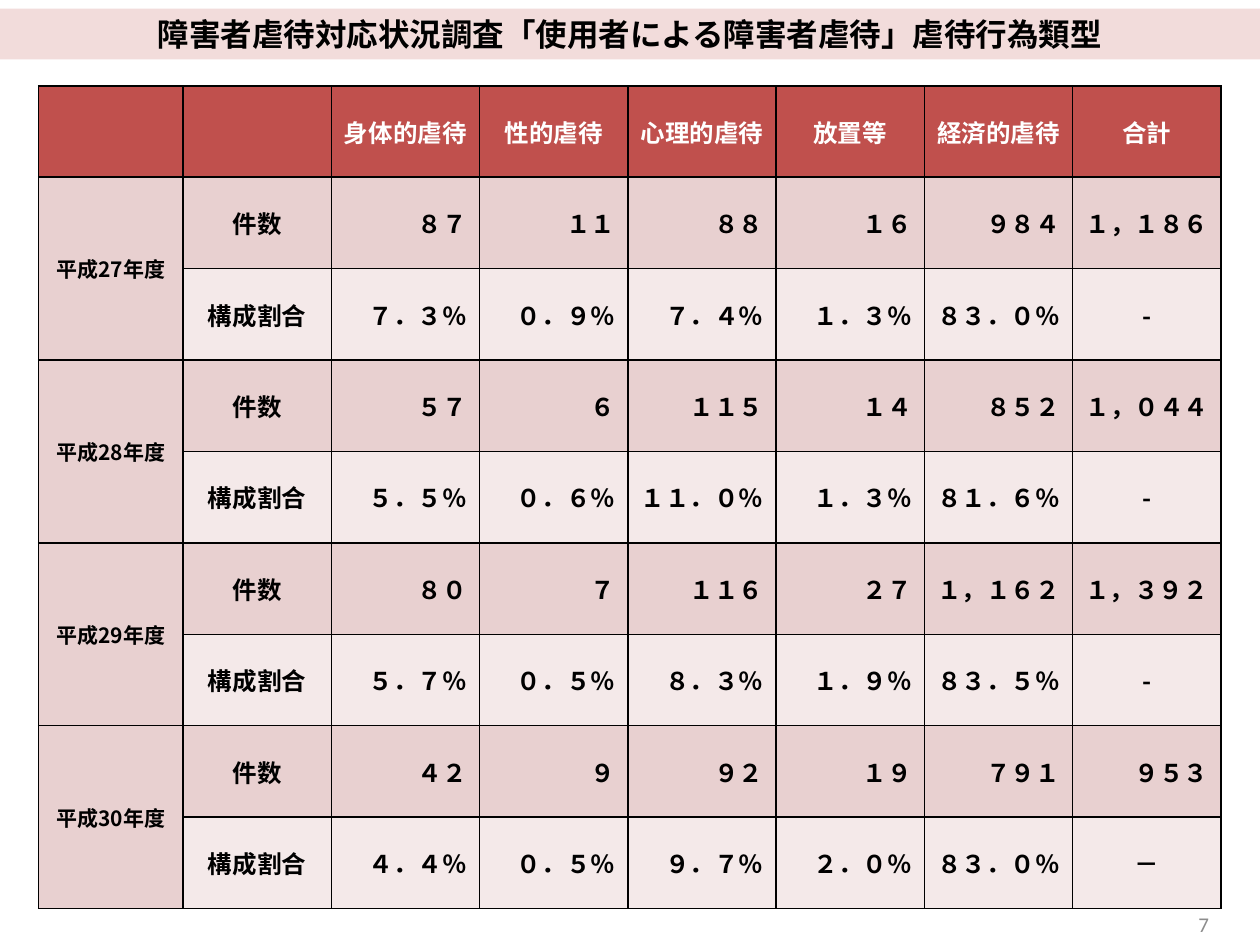
from lxml import etree
from pptx import Presentation
from pptx.dml.color import RGBColor
from pptx.enum import text
from pptx.oxml import ns
from pptx.util import Pt

TITLE = "障害者虐待対応状況調査「使用者による障害者虐待」虐待行為類型"
PAGE_NUMBER = "7"
HEADER = ["", "", "身体的虐待", "性的虐待", "心理的虐待", "放置等", "経済的虐待", "合計"]
MEASURES = ["件数", "構成割合"]
YEARS = [
    ("平成27年度",
     ["８７", "１１", "８８", "１６", "９８４", "１，１８６"],
     ["７．３％", "０．９％", "７．４％", "１．３％", "８３．０％", "-"]),
    ("平成28年度",
     ["５７", "６", "１１５", "１４", "８５２", "１，０４４"],
     ["５．５％", "０．６％", "１１．０％", "１．３％", "８１．６％", "-"]),
    ("平成29年度",
     ["８０", "７", "１１６", "２７", "１，１６２", "１，３９２"],
     ["５．７％", "０．５％", "８．３％", "１．９％", "８３．５％", "-"]),
    ("平成30年度",
     ["４２", "９", "９２", "１９", "７９１", "９５３"],
     ["４．４％", "０．５％", "９．７％", "２．０％", "８３．０％", "－"]),
]
CENTERED_VALUES = {"-", "－", "１，３９２"}

JAPANESE_FONT = "Noto Sans CJK JP"
NUMBER_FONT = "Calibri"
BLACK = RGBColor(0x00, 0x00, 0x00)
WHITE = RGBColor(0xFF, 0xFF, 0xFF)
GRAY = RGBColor(0x8C, 0x8C, 0x8C)
TITLE_PINK = RGBColor(0xF2, 0xDC, 0xDB)
HEADER_RED = RGBColor(0xC0, 0x50, 0x4D)
BANDS = [RGBColor(0xE8, 0xD0, 0xD0), RGBColor(0xF4, 0xE9, 0xE9)]

TABLE_LEFT, TABLE_TOP = 22, 49
YEAR_WIDTH, COLUMN_WIDTH, ROW_HEIGHT = 82.6, 84.75, 52.25
CENTER, RIGHT = text.PP_ALIGN.CENTER, text.PP_ALIGN.RIGHT


def format_paragraph(paragraph, size, color, align, name=JAPANESE_FONT, bold=True):
    paragraph.alignment = align
    font = paragraph.font
    font.size, font.bold, font.name = Pt(size), bold, name
    font.color.rgb = color
    # East Asian characters take their typeface from a:ea
    latin = paragraph._p.pPr.find(".//" + ns.qn("a:latin"))
    latin.addnext(etree.Element(ns.qn("a:ea"), typeface=name))


def add_borders(cell):
    properties = cell._tc.get_or_add_tcPr()
    for index, side in enumerate(["lnL", "lnR", "lnT", "lnB"]):
        line = etree.Element(ns.qn("a:" + side), w=str(Pt(1)))
        fill = etree.SubElement(line, ns.qn("a:solidFill"))
        etree.SubElement(fill, ns.qn("a:srgbClr"), val=str(BLACK))
        properties.insert(index, line)


def fill_cell(cell, content, fill, size=14, color=BLACK, align=CENTER):
    cell.fill.solid()
    cell.fill.fore_color.rgb = fill
    cell.vertical_anchor = text.MSO_ANCHOR.MIDDLE
    add_borders(cell)
    cell.text = content
    format_paragraph(cell.text_frame.paragraphs[0], size, color, align)


def add_title(slide):
    title = slide.shapes.title
    title.left, title.top, title.width, title.height = Pt(0), Pt(5), Pt(720), Pt(29)
    title.fill.solid()
    title.fill.fore_color.rgb = TITLE_PINK
    title.text = TITLE
    title.text_frame.auto_size = text.MSO_AUTO_SIZE.NONE
    title.text_frame.vertical_anchor = text.MSO_ANCHOR.TOP
    format_paragraph(title.text_frame.paragraphs[0], 18, BLACK, CENTER)


def add_abuse_table(slide):
    row_count, column_count = 1 + len(YEARS) * len(MEASURES), len(HEADER)
    table = slide.shapes.add_table(
        row_count, column_count, Pt(TABLE_LEFT), Pt(TABLE_TOP),
        Pt(YEAR_WIDTH + COLUMN_WIDTH * (column_count - 1)),
        Pt(ROW_HEIGHT * row_count)).table
    for index, column in enumerate(table.columns):
        column.width = Pt(COLUMN_WIDTH if index else YEAR_WIDTH)
    for row in table.rows:
        row.height = Pt(ROW_HEIGHT)

    for column, heading in enumerate(HEADER):
        fill_cell(table.cell(0, column), heading, HEADER_RED, color=WHITE)
    for year_index, (year, *value_rows) in enumerate(YEARS):
        first_row = 1 + year_index * len(MEASURES)
        for offset, (measure, values) in enumerate(zip(MEASURES, value_rows)):
            row, band = first_row + offset, BANDS[offset]
            fill_cell(table.cell(row, 0), "" if offset else year, BANDS[0], size=12)
            fill_cell(table.cell(row, 1), measure, band)
            for column, value in enumerate(values, start=2):
                align = CENTER if value in CENTERED_VALUES else RIGHT
                fill_cell(table.cell(row, column), value, band, align=align)
        last_row = first_row + len(MEASURES) - 1
        table.cell(first_row, 0).merge(table.cell(last_row, 0))


def add_page_number(slide):
    box = slide.shapes.add_textbox(Pt(530), Pt(513.5), Pt(168), Pt(28.75))
    frame = box.text_frame
    frame.word_wrap = True
    frame.vertical_anchor = text.MSO_ANCHOR.MIDDLE
    frame.text = PAGE_NUMBER
    format_paragraph(frame.paragraphs[0], 12, GRAY, RIGHT, NUMBER_FONT, bold=False)


def main():
    presentation = Presentation()
    presentation.slide_width, presentation.slide_height = Pt(720), Pt(540)
    slide = presentation.slides.add_slide(presentation.slide_layouts[5])
    add_title(slide)
    add_abuse_table(slide)
    add_page_number(slide)
    presentation.save("out.pptx")


if __name__ == "__main__":
    main()
